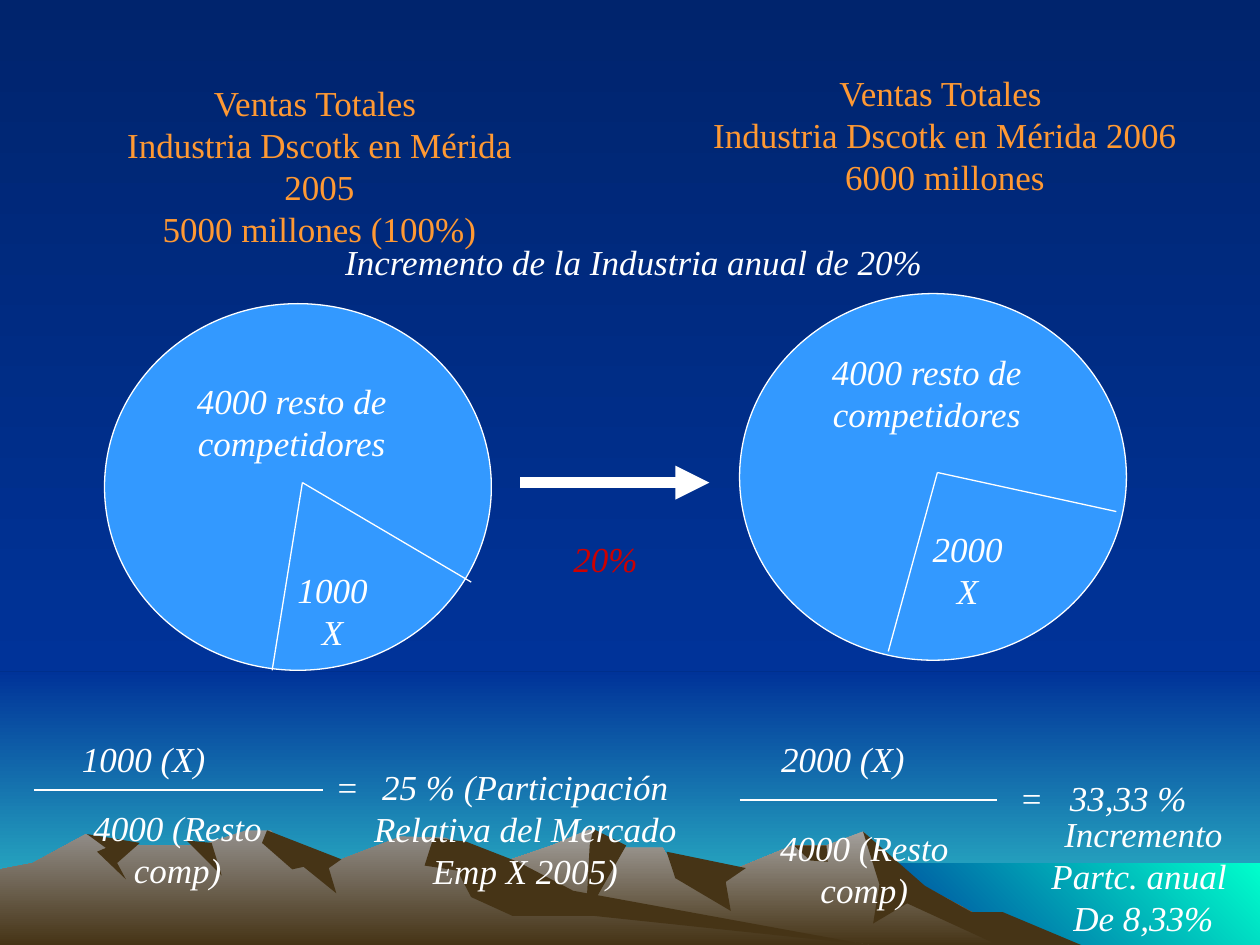
from pptx import Presentation
from pptx.dml.color import RGBColor
from pptx.enum.shapes import MSO_CONNECTOR, MSO_SHAPE
from pptx.enum.text import PP_ALIGN
from pptx.oxml.ns import qn
from pptx.util import Inches, Pt
from lxml.etree import SubElement

NIGHT = RGBColor(0x00, 0x24, 0x6D)
NAVY = RGBColor(0x00, 0x33, 0x99)
TEAL = RGBColor(0x33, 0xCC, 0xCC)
AQUA = RGBColor(0x00, 0xFF, 0xCC)
STONE = RGBColor(0xA5, 0xA2, 0x9F)
GRAY = RGBColor(0x93, 0x8F, 0x8B)
BROWN = RGBColor(0x46, 0x34, 0x16)
BLUE = RGBColor(0x33, 0x99, 0xFF)
WHITE = RGBColor(0xFF, 0xFF, 0xFF)
ORANGE = RGBColor(0xFF, 0x99, 0x33)
RED = RGBColor(0xCC, 0x00, 0x00)


def shade(fill, first, last, angle=270):
    fill.gradient()
    fill.gradient_angle = angle
    for stop, color in zip(fill.gradient_stops, (first, last)):
        stop.color.rgb = color


def write(left, top, width, lines, color=WHITE, italic=True, wrap=False):
    rows = lines.count("\n") + 1
    box = slide.shapes.add_textbox(
        Inches(left), Inches(top), Inches(width), Inches(0.1 + rows / 3))
    frame = box.text_frame
    frame.word_wrap = wrap
    frame.text = lines
    for para in frame.paragraphs:
        para.alignment = PP_ALIGN.CENTER
        para.font.name = "Times New Roman"
        para.font.size = Pt(20)
        para.font.italic = italic
        para.font.color.rgb = color


prs = Presentation()
prs.slide_width, prs.slide_height = Inches(10), Inches(7.5)
slide = prs.slides.add_slide(prs.slide_layouts[6])
shade(slide.background.fill, NIGHT, NAVY)

for left, top, bottom, first, last, angle in [
    (0, 5.33, 7.5, NAVY, TEAL, 270),
    (0, 0, 5.33, NIGHT, NAVY, 270),
    (6.83, 6.85, 7.5, NAVY, AQUA, 45),
]:
    area = slide.shapes.add_shape(
        MSO_SHAPE.RECTANGLE, Inches(left), Inches(top),
        Inches(10 - left), Inches(bottom - top))
    area.shadow.inherit = False
    area.line.fill.background()
    shade(area.fill, first, last, angle)

hills = [
    (STONE, [(8.2, 7.5), (7.23, 6.98), (6.85, 6.6), (6.56, 6.71), (6.29, 6.71),
             (5.66, 6.97), (5.36, 6.9), (5.26, 6.73), (4.86, 6.73), (4.68, 6.58),
             (4.38, 6.71), (3.27, 7.09), (2.58, 7.5)]),
    (BROWN, [(8.58, 7.5), (7.96, 7.24), (7.71, 7.24), (7.34, 7.03), (6.85, 6.6),
             (6.98, 7.02), (6.93, 7.33), (7.2, 7.17), (7.92, 7.5)]),
    (BROWN, [(4.71, 6.58), (4.68, 6.71), (4.65, 7.27), (4.97, 6.71)]),
    (BROWN, [(5.29, 6.76), (5.36, 6.97), (5.8, 7.23), (5.76, 7), (5.92, 6.89)]),
    (BROWN, [(6.3, 6.71), (6.43, 6.83), (6.57, 6.84), (6.56, 6.71)]),
    (GRAY, [(6.9, 7.5), (4.32, 7.12), (3.54, 6.65), (3.18, 6.64), (2.71, 6.82),
            (2.36, 6.81), (2.15, 6.59), (1.95, 6.59), (1.6, 6.71), (0.94, 6.71),
            (0.68, 6.62), (0.26, 6.85), (0, 6.9), (0, 7.5)]),
    (BROWN, [(2.12, 6.59), (2.08, 6.69), (2.32, 6.9), (2.41, 6.88), (2.67, 7.09),
             (2.61, 6.89), (2.71, 6.82)]),
    (BROWN, [(3.44, 6.65), (3.37, 6.87), (3.63, 6.91), (3.74, 7.12), (4.07, 7.27),
             (4.72, 7.27), (6.9, 7.5), (4.55, 7.07), (4.11, 6.84), (3.7, 6.68)]),
    (BROWN, [(1.48, 6.67), (1.76, 6.95), (1.68, 6.69)]),
    (BROWN, [(0.69, 6.62), (0.84, 6.73), (0.77, 6.76), (1, 6.98), (0.93, 6.85),
             (1.11, 6.69)]),
]
for color, points in hills:
    spots = [(Inches(x), Inches(y)) for x, y in points]
    outline = slide.shapes.build_freeform(*spots[0])
    outline.add_line_segments(spots[1:])
    hill = outline.convert_to_shape()
    hill.shadow.inherit = False
    hill.line.fill.background()
    if color == BROWN:
        hill.fill.solid()
        hill.fill.fore_color.rgb = color
    else:
        shade(hill.fill, color, BROWN)

for left, top in [(0.83, 2.41), (5.87, 2.33)]:
    pie = slide.shapes.add_shape(
        MSO_SHAPE.OVAL, Inches(left), Inches(top), Inches(3.07), Inches(2.91))
    pie.shadow.inherit = False
    pie.fill.solid()
    pie.fill.fore_color.rgb = BLUE
    pie.line.color.rgb = WHITE
    pie.line.width = Pt(0.75)

for x1, y1, x2, y2, weight in [
    (2.4, 3.83, 2.16, 5.32, 0.75),
    (2.4, 3.83, 3.74, 4.62, 0.75),
    (7.44, 3.75, 7.05, 5.17, 0.75),
    (7.44, 3.75, 8.86, 4.06, 0.75),
    (0.27, 6.27, 2.56, 6.27, 0.75),
    (5.87, 6.35, 7.91, 6.35, 0.75),
    (4.13, 3.83, 5.63, 3.83, 6.5),
]:
    line = slide.shapes.add_connector(
        MSO_CONNECTOR.STRAIGHT, Inches(x1), Inches(y1), Inches(x2), Inches(y2))
    line.line.color.rgb = WHITE
    line.line.width = Pt(weight)
    props = line._element.spPr
    SubElement(props, qn("a:effectLst"))
    if weight > 1:
        SubElement(props.find(qn("a:ln")), qn("a:tailEnd"), type="triangle")

for left, top, width, lines in [
    (0.66, 0.6, 3.75,
     "Ventas Totales \nIndustria Dscotk en Mérida 2005\n5000 millones (100%)"),
    (5, 0.52, 5,
     "Ventas Totales \nIndustria Dscotk en Mérida 2006\n6000 millones"),
]:
    write(left, top, width, lines, ORANGE, False, True)
for left, top, width, lines in [
    (2.64, 1.86, 4.78, "Incremento de la Industria anual de 20%"),
    (1.46, 2.96, 1.78, "4000 resto de \ncompetidores "),
    (6.5, 2.73, 1.78, "4000 resto de \ncompetidores "),
    (2.26, 4.46, 0.76, "1000\nX"),
    (7.3, 4.14, 0.76, "2000\nX"),
    (0.55, 5.8, 1.18, "1000 (X)"),
    (6.1, 5.8, 1.18, "2000 (X)"),
    (2.56, 6.03, 0.39, "="),
    (7.99, 6.11, 0.39, "="),
    (2.87, 6.03, 2.6, "25 % (Participación\nRelativa del Mercado\nEmp X 2005)"),
    (8.39, 6.11, 1.13, "33,33 %"),
]:
    write(left, top, width, lines)
for left, top in [(0.36, 6.35), (5.81, 6.51)]:
    write(left, top, 2.1, "4000 (Resto comp)", wrap=True)
write(8.15, 6.4, 1.85, "Incremento Partc. anual \nDe 8,33%", wrap=True)
write(4.45, 4.22, 0.71, "20%", RED)

prs.save("out.pptx")
